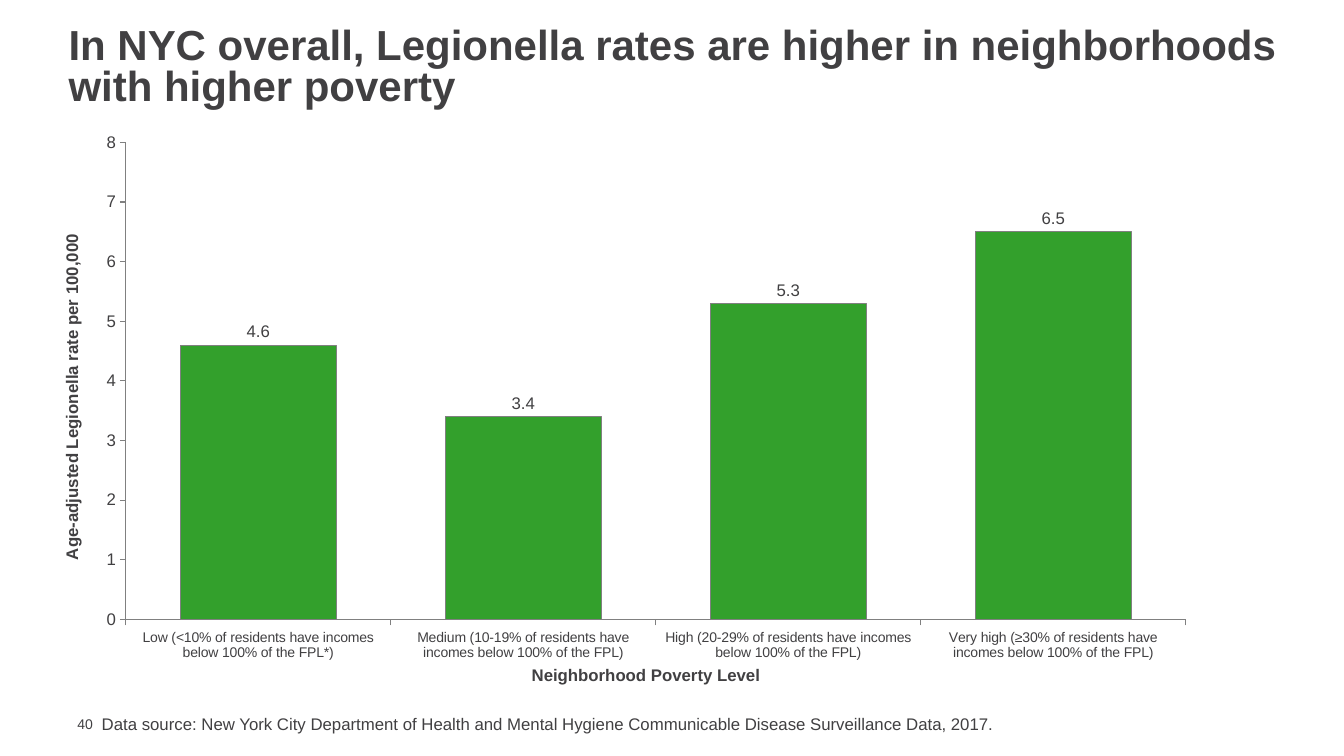
from dataclasses import dataclass

from lxml.etree import SubElement
from pptx import Presentation
from pptx.chart.data import CategoryChartData
from pptx.dml.color import RGBColor
from pptx.enum.chart import XL_CHART_TYPE as ChartType
from pptx.enum.chart import XL_LABEL_POSITION as LabelPosition
from pptx.enum.chart import XL_TICK_MARK as TickMark
from pptx.enum.text import MSO_ANCHOR as Anchor
from pptx.enum.text import MSO_AUTO_SIZE as AutoSize
from pptx.enum.text import PP_ALIGN as Align
from pptx.oxml.ns import qn
from pptx.util import Inches, Pt

SLIDE_WIDTH, SLIDE_HEIGHT = Inches(13.33), Inches(7.5)


@dataclass(frozen=True)
class Theme:
    font: str = "Arial"
    ink: RGBColor = RGBColor(0x41, 0x40, 0x42)
    bar: RGBColor = RGBColor(0x33, 0xA0, 0x2C)
    line: RGBColor = RGBColor(0x80, 0x80, 0x80)
    title_size: int = 30
    text_size: int = 12
    small_size: int = 10
    line_width: float = 0.75


@dataclass(frozen=True)
class Area:
    """A rectangle in percent of the slide's width and height."""
    left: float
    top: float
    width: float
    height: float

    def box(self) -> tuple[int, int, int, int]:
        return (round(SLIDE_WIDTH * self.left / 100), round(SLIDE_HEIGHT * self.top / 100),
                round(SLIDE_WIDTH * self.width / 100), round(SLIDE_HEIGHT * self.height / 100))


@dataclass(frozen=True)
class PovertyLevel:
    label: str
    rate: float


THEME = Theme()
TITLE_AREA = Area(4.35, 3.07, 93.17, 12.13)
CHART_AREA = Area(4.35, 16.67, 89.42, 74.53)
SOURCE_AREA = Area(6.83, 93.73, 74.42, 4)
NUMBER_AREA = Area(5.03, 94.67, 3.23, 2.27)
PLOT_LAYOUT = {"layoutTarget": "inner", "xMode": "edge", "yMode": "edge",
               "x": 0.056, "y": 0.029, "w": 0.882, "h": 0.847}
LEVELS = [
    PovertyLevel("Low (<10% of residents have incomes below 100% of the FPL*)", 4.6),
    PovertyLevel("Medium (10-19% of residents have incomes below 100% of the FPL)", 3.4),
    PovertyLevel("High (20-29% of residents have incomes below 100% of the FPL)", 5.3),
    PovertyLevel("Very high (≥30% of residents have incomes below 100% of the FPL)", 6.5),
]


def style_font(font, size: float, bold: bool = False) -> None:
    font.name, font.size, font.bold = THEME.font, Pt(size), bold
    font.color.rgb = THEME.ink


def style_line(line) -> None:
    line.color.rgb = THEME.line
    line.width = Pt(THEME.line_width)


def write(text_frame, text: str, *, size: float = THEME.text_size, bold: bool = False,
          align: Align | None = None, line_spacing: float | None = None) -> None:
    paragraph = text_frame.paragraphs[0]
    paragraph.alignment = align
    paragraph.line_spacing = line_spacing
    run = paragraph.add_run()
    run.text = text
    style_font(run.font, size, bold)


def add_title(slide, text: str) -> None:
    title = slide.shapes.title
    title.left, title.top, title.width, title.height = TITLE_AREA.box()
    title.text_frame.auto_size = AutoSize.NONE
    title.text_frame.vertical_anchor = Anchor.MIDDLE
    write(title.text_frame, text, size=THEME.title_size, bold=True,
          align=Align.LEFT, line_spacing=0.8)


def add_text_box(slide, area: Area):
    text_frame = slide.shapes.add_textbox(*area.box()).text_frame
    text_frame.word_wrap = True
    return text_frame


def style_axis(axis, title: str, size: float) -> None:
    axis.has_major_gridlines = False
    axis.major_tick_mark = TickMark.OUTSIDE
    axis.minor_tick_mark = TickMark.NONE
    style_line(axis.format.line)
    style_font(axis.tick_labels.font, size)
    write(axis.axis_title.text_frame, title, bold=True)


def place_plot(chart) -> None:
    """Fix the inner plot area, in shares of the chart's size."""
    plot_area = chart._chartSpace.chart.plotArea
    for old_layout in plot_area.findall(qn("c:layout")):
        plot_area.remove(old_layout)
    layout = SubElement(plot_area, qn("c:layout"))
    plot_area.insert(0, layout)
    manual = SubElement(layout, qn("c:manualLayout"))
    for name, value in PLOT_LAYOUT.items():
        SubElement(manual, qn(f"c:{name}")).set("val", str(value))


def add_rate_chart(slide) -> None:
    data = CategoryChartData(number_format="0.0")
    data.categories = [level.label for level in LEVELS]
    data.add_series("Series 1", [level.rate for level in LEVELS])
    chart = slide.shapes.add_chart(ChartType.COLUMN_CLUSTERED, *CHART_AREA.box(), data).chart
    chart.has_title = chart.has_legend = False
    style_font(chart.font, THEME.small_size)
    place_plot(chart)

    style_axis(chart.category_axis, "Neighborhood Poverty Level", THEME.small_size)
    rate_axis = chart.value_axis
    style_axis(rate_axis, "Age-adjusted Legionella rate per 100,000", THEME.text_size)
    rate_axis.minimum_scale, rate_axis.maximum_scale, rate_axis.major_unit = 0, 8, 1
    rate_axis.tick_labels.number_format = "0"
    rate_axis.tick_labels.number_format_is_linked = False

    plot = chart.plots[0]
    plot.gap_width = 70
    plot.vary_by_categories = False
    bars = plot.series[0]
    bars.format.fill.solid()
    bars.format.fill.fore_color.rgb = THEME.bar
    style_line(bars.format.line)
    labels = bars.data_labels
    labels.show_value = True
    labels.position = LabelPosition.OUTSIDE_END
    labels.number_format, labels.number_format_is_linked = "0.0", False
    style_font(labels.font, THEME.text_size)


def main() -> None:
    presentation = Presentation()
    presentation.slide_width, presentation.slide_height = SLIDE_WIDTH, SLIDE_HEIGHT
    slide = presentation.slides.add_slide(presentation.slide_layouts.get_by_name("Title Only"))

    add_title(slide, "In NYC overall, Legionella rates are higher in neighborhoods "
                     "with higher poverty")
    add_rate_chart(slide)
    write(add_text_box(slide, SOURCE_AREA),
          "Data source: New York City Department of Health and Mental Hygiene "
          "Communicable Disease Surveillance Data, 2017.")

    number = add_text_box(slide, NUMBER_AREA)
    number.margin_top = number.margin_bottom = number.margin_right = 0
    number.vertical_anchor = Anchor.MIDDLE
    write(number, "40", size=THEME.small_size)
    presentation.save("out.pptx")


if __name__ == "__main__":
    main()
